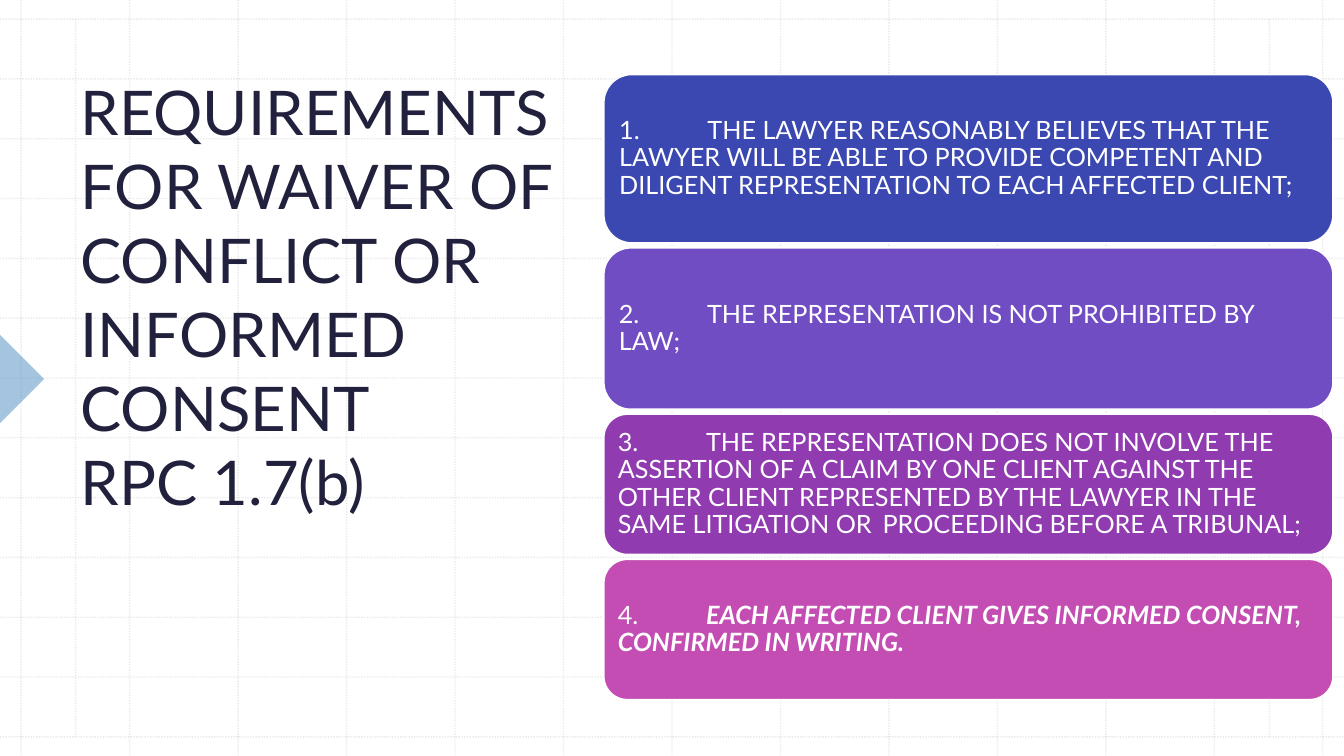
from lxml import etree
from pptx import Presentation
from pptx import util as u
from pptx.dml.color import RGBColor
from pptx.enum import dml, shapes, text
from pptx.oxml.ns import qn

FONT = "Lato"
TITLE = "REQUIREMENTS FOR WAIVER OF CONFLICT OR INFORMED CONSENT \vRPC 1.7(b)"
PLAIN, STRONG = {}, {"bold": True, "italic": True}
CARDS = [
    ("3B48B1", 1.67, PLAIN, "THE LAWYER REASONABLY BELIEVES THAT THE LAWYER WILL BE ABLE TO "
     "PROVIDE COMPETENT AND DILIGENT REPRESENTATION TO EACH AFFECTED CLIENT;"),
    ("714DC3", 1.6, PLAIN, "THE REPRESENTATION IS NOT PROHIBITED BY LAW;"),
    ("913BB1", 1.39, PLAIN, "THE REPRESENTATION DOES NOT INVOLVE THE ASSERTION OF A CLAIM BY ONE "
     "CLIENT AGAINST THE OTHER CLIENT REPRESENTED BY THE LAWYER IN THE SAME LITIGATION OR "
     "\tPROCEEDING BEFORE A TRIBUNAL;"),
    ("C34DB2", 1.39, STRONG, "EACH AFFECTED CLIENT GIVES INFORMED CONSENT, CONFIRMED IN WRITING."),
]


def paint(color_format, color, opacity=100):
    """Set a fill or line colour from a hex string, with an opacity in percent."""
    color_format.rgb = RGBColor.from_string(color)
    if opacity < 100:
        for node in color_format._xFill.iter(qn("a:srgbClr")):
            etree.SubElement(node, qn("a:alpha"), val=str(opacity * 1000))


def apply(target, values):
    """Set each attribute named in a dict of format values."""
    for name, value in values.items():
        setattr(target, name, value)


def frame_text(frame, inset):
    """Wrap a text frame, centre it vertically and give it an even inset."""
    apply(frame, {"word_wrap": True, "vertical_anchor": text.MSO_ANCHOR.MIDDLE})
    apply(frame, {f"margin_{side}": u.Inches(inset) for side in ("left", "right", "top", "bottom")})


def write(para, words, size, color, values):
    """Add formatted words to a paragraph."""
    para.add_run().text = words
    span = para.runs[-1]
    apply(span.font, {"name": FONT, "size": u.Pt(size), **values})
    paint(span.font.color, color)


def add_grid_line(page, x1, y1, x2, y2):
    """Draw one faint dotted line."""
    line = page.shapes.add_connector(
        shapes.MSO_CONNECTOR.STRAIGHT, *map(u.Inches, (x1, y1, x2, y2)))
    apply(line.line, {"width": u.Pt(1), "dash_style": dml.MSO_LINE.ROUND_DOT})
    line.line.fill.solid()
    paint(line.line.fill.fore_color, "BCBCBC")
    for node in line.line._ln.iter(qn("a:srgbClr")):
        etree.SubElement(node, qn("a:alpha"), val="30000")
    etree.SubElement(line._element.spPr, qn("a:effectLst"))


def add_grid(page, width, height, left=0.21, top=0.19, cells=12):
    """Rule the page into equal cells, with two margin lines."""
    right, bottom = width - left, height - top
    for i in range(cells + 1):
        x = left + i * (right - left) / cells
        y = top + i * (bottom - top) / cells
        add_grid_line(page, x, 0, x, height)
        add_grid_line(page, 0, y, width, y)
    for x in (0.75, 12.59):
        add_grid_line(page, x, top, x, bottom)


def add_marker(page, middle, side):
    """Place the translucent triangle that points in from the left edge."""
    marker = page.shapes.add_shape(
        shapes.MSO_SHAPE.RIGHT_TRIANGLE,
        *map(u.Inches, (-side / 2, middle - side / 2, side, side)))
    marker.rotation = 225
    marker.shadow.inherit = False
    marker.fill.solid()
    paint(marker.fill.fore_color, "4D8BC3")
    for node in marker._element.spPr.iter(qn("a:srgbClr")):
        etree.SubElement(node, qn("a:alpha"), val="50000")
    marker.line.fill.background()


def add_title(page, left, top, width, height):
    """Write the slide title in its box."""
    box = page.shapes.add_textbox(*map(u.Inches, (left, top, width, height)))
    frame_text(box.text_frame, 0.1)
    para = box.text_frame.paragraphs[0]
    for i, words in enumerate(TITLE.split("\v")):
        if i:
            para.add_line_break()
        write(para, words, 44, "21213D", PLAIN)


def add_cards(page, left, top, width, gap):
    """Stack the numbered requirement cards downwards."""
    for number, (color, height, values, words) in enumerate(CARDS, 1):
        card = page.shapes.add_shape(
            shapes.MSO_SHAPE.ROUNDED_RECTANGLE, *map(u.Inches, (left, top, width, height)))
        card.shadow.inherit = False
        card.fill.solid()
        paint(card.fill.fore_color, color)
        card.line.width = u.Pt(1)
        paint(card.line.color, "FFFFFF")
        frame_text(card.text_frame, 0.07)
        para = card.text_frame.paragraphs[0]
        apply(para, {"alignment": text.PP_ALIGN.LEFT, "line_spacing": 0.9})
        para._p.get_or_add_pPr().set("defTabSz", str(u.Inches(0.875)))
        write(para, f"{number}.\t", 18, "FFFFFF", PLAIN)
        write(para, words, 18, "FFFFFF", values)
        top += height + gap


def main():
    """Build the slide and save it."""
    deck = Presentation()
    width, height = 13.33, 7.5
    apply(deck, {"slide_width": u.Inches(width), "slide_height": u.Inches(height)})
    page = deck.slides.add_slide(deck.slide_layouts[6])
    page.background.fill.solid()
    paint(page.background.fill.fore_color, "FFFFFF")
    add_grid(page, width, height)
    add_marker(page, 3.76, 0.62)
    add_title(page, 0.7, -0.04, 5.92, 5.95)
    add_cards(page, 5.99, 0.74, 7.23, 0.05)
    deck.save("out.pptx")


if __name__ == "__main__":
    main()
